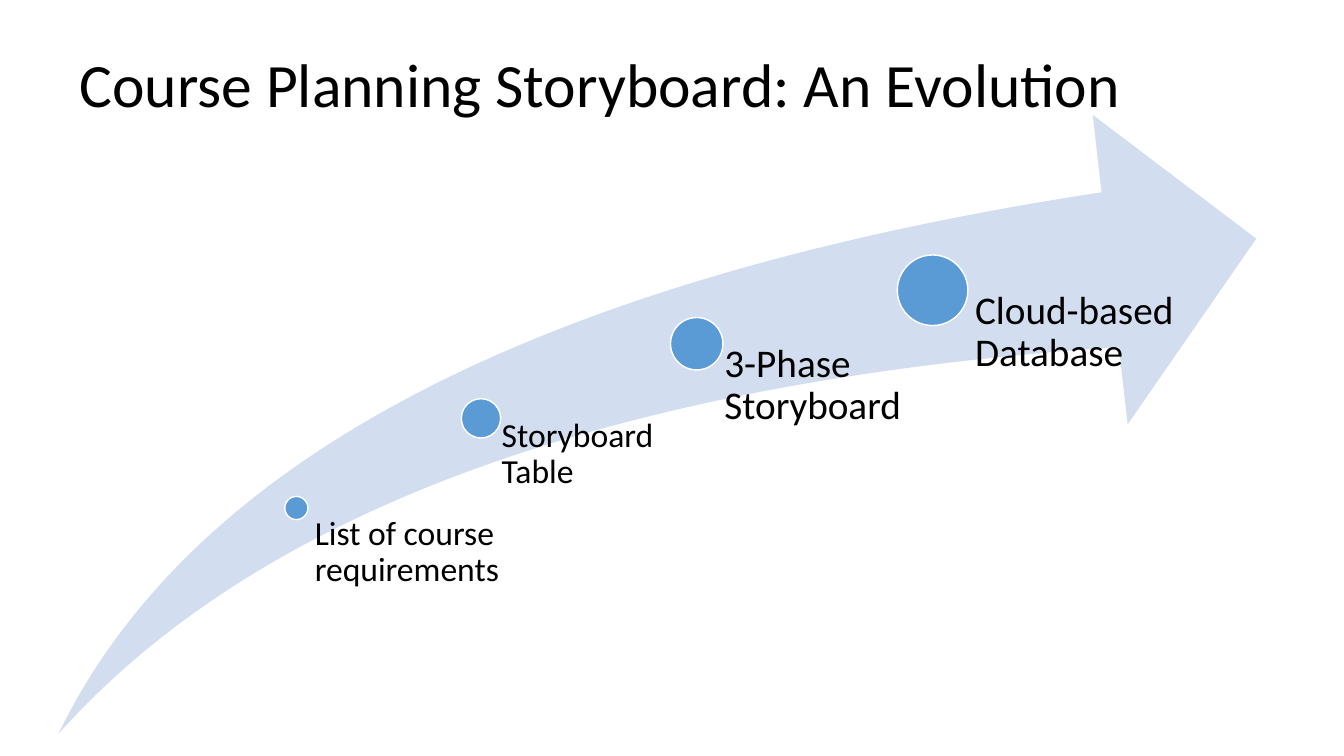
from dataclasses import dataclass

from pptx import Presentation
from pptx import util as u
from pptx.dml.color import RGBColor
from pptx.enum import shapes, text


@dataclass(frozen=True)
class Theme:
    font: str = "Calibri"
    ink: RGBColor = RGBColor(0, 0, 0)
    arrow: RGBColor = RGBColor(0xD2, 0xDE, 0xEF)
    dot: RGBColor = RGBColor(0x5B, 0x9B, 0xD5)
    dot_edge: RGBColor = RGBColor(0xFF, 0xFF, 0xFF)
    title_size: int = 44
    large_label: int = 28
    small_label: int = 24


@dataclass(frozen=True)
class Box:
    left: float
    top: float
    width: float
    height: float

    def lengths(self):
        return [u.Inches(v) for v in (self.left, self.top, self.width, self.height)]


@dataclass(frozen=True)
class Milestone:
    """A dot centred at (x, y) from the arrow's corner, with its label."""
    label: str
    size: int
    x: float
    y: float
    diameter: float
    label_width: float
    label_height: float
    shift_x: float = 0
    shift_y: float = 0


THEME = Theme()
MILESTONES = [
    Milestone("List of course requirements", THEME.small_label,
              2.36, 3.9, 0.23, 2.21, 1.46, 0.06, 0.08),
    Milestone("Storyboard Table", THEME.small_label,
              4.19, 3.01, 0.39, 2.06, 2.81),
    Milestone("3-Phase Storyboard", THEME.large_label,
              6.33, 2.27, 0.52, 2.06, 3.79),
    Milestone("Cloud-based Database", THEME.large_label,
              8.67, 1.74, 0.7, 2.82, 4.4, 0.05),
]
LABEL_INSET = 0.53  # share of the dot's diameter


def add_text(parent, box, wording, size, insets):
    """Add wrapped, top-anchored text; insets are left, top, right, bottom."""
    frame = parent.add_textbox(*box.lengths()).text_frame
    frame.word_wrap = True
    frame.vertical_anchor = text.MSO_ANCHOR.TOP
    (frame.margin_left, frame.margin_top,
     frame.margin_right, frame.margin_bottom) = [u.Inches(v) for v in insets]
    frame.text = wording
    para = frame.paragraphs[0]
    para.alignment = text.PP_ALIGN.LEFT
    para.line_spacing = 0.9
    font = para.runs[0].font
    font.name = THEME.font
    font.size = u.Pt(size)
    font.color.rgb = THEME.ink


def add_filled_shape(parent, kind, box, fill):
    shape = parent.add_shape(kind, *box.lengths())
    shape.shadow.inherit = False
    shape.fill.solid()
    shape.fill.fore_color.rgb = fill
    shape.line.fill.background()
    return shape


def add_milestone(parent, area, milestone):
    x, y = area.left + milestone.x, area.top + milestone.y
    diameter = milestone.diameter
    dot = add_filled_shape(
        parent, shapes.MSO_SHAPE.OVAL,
        Box(x - diameter / 2, y - diameter / 2, diameter, diameter), THEME.dot)
    dot.line.color.rgb = THEME.dot_edge
    dot.line.width = u.Pt(1)
    label_box = Box(x + milestone.shift_x, y + milestone.shift_y,
                    milestone.label_width, milestone.label_height)
    add_text(parent, label_box, milestone.label, milestone.size,
             (diameter * LABEL_INSET, 0, 0, 0))


def add_evolution(slide, area):
    """Draw the rising arrow with its milestones as one group."""
    parts = slide.shapes.add_group_shape().shapes
    arrow = add_filled_shape(parts, shapes.MSO_SHAPE.SWOOSH_ARROW, area, THEME.arrow)
    arrow.adjustments[0] = 0.25
    arrow.adjustments[1] = 0.25
    for milestone in MILESTONES:
        add_milestone(parts, area, milestone)


def add_title(slide, box):
    add_text(slide.shapes, box, "Course Planning Storyboard: An Evolution",
             THEME.title_size, (0.1, 0.09, 0.1, 0.05))


def main():
    deck = Presentation()
    deck.slide_width, deck.slide_height = u.Inches(13.33), u.Inches(7.5)
    slide = deck.slides.add_slide(deck.slide_layouts[6])
    add_evolution(slide, Box(0.58, 1.14, 11.88, 6.14))
    add_title(slide, Box(0.69, 0.45, 11, 1.5))
    deck.save("out.pptx")


if __name__ == "__main__":
    main()
